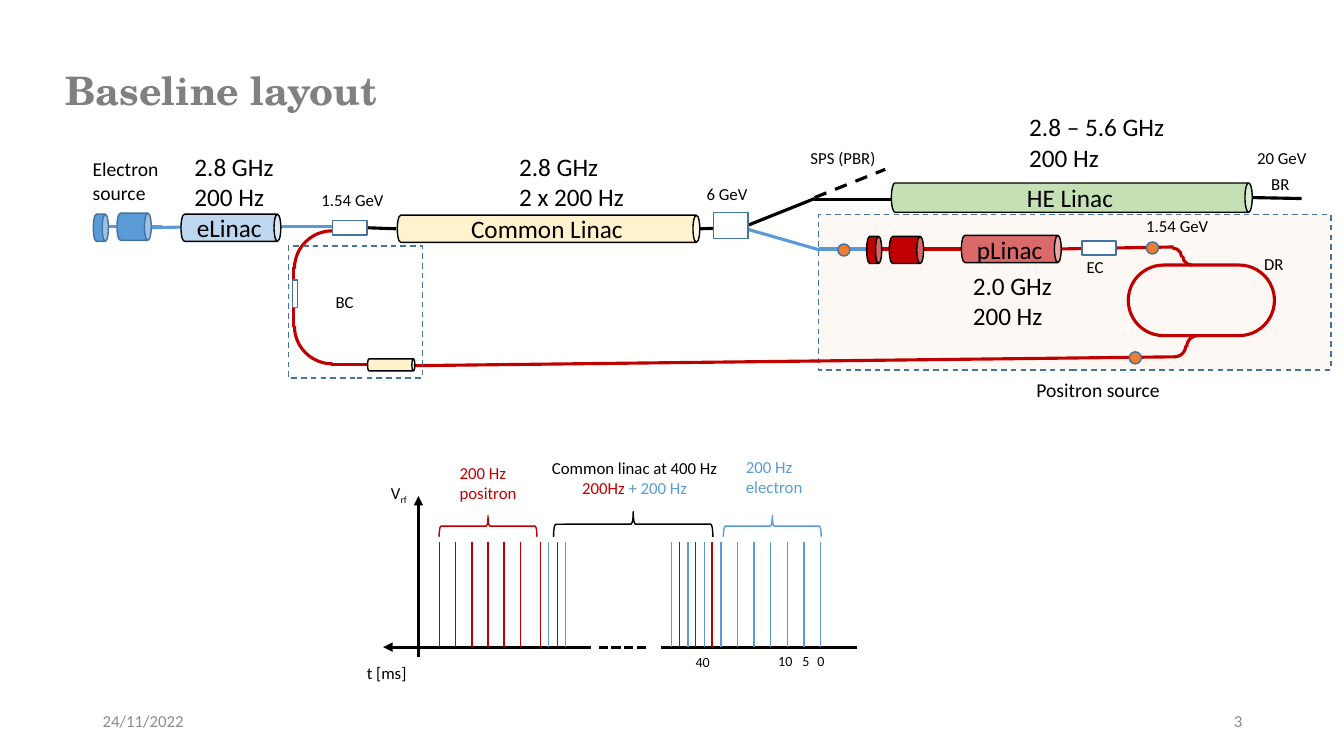
import dataclasses
from typing import Optional

import pptx
import pptx.dml.color
import pptx.enum.dml
import pptx.enum.shapes
import pptx.enum.text
import pptx.oxml
import pptx.oxml.ns
import pptx.util

SHAPE = pptx.enum.shapes.MSO_SHAPE
DASH = pptx.enum.dml.MSO_LINE.DASH
SHORT_DASH = pptx.enum.dml.MSO_LINE.SQUARE_DOT
ALIGN = pptx.enum.text.PP_ALIGN
ANCHOR = pptx.enum.text.MSO_ANCHOR
COLORS = {
    "black": "000000", "white": "FFFFFF", "gray": "808080", "footer": "8C8C8C",
    "positron": "C00000", "electron": "5B9BD5", "outline": "43739E",
    "area": "FBE5D6", "elinac": "BDD7EE", "common": "FFF2CC",
    "helinac": "C5E0B4", "marker": "ED7D31",
}


@dataclasses.dataclass
class Beam:
    x1: float
    y1: float
    x2: float
    y2: float
    color: str = "black"
    width: float = 2.25
    dash: Optional[object] = None
    arrow: bool = False


@dataclasses.dataclass
class Part:
    kind: object
    left: float
    top: float
    width: float
    height: float
    fill: Optional[str] = None
    line: str = "outline"
    weight: float = 1
    opacity: int = 100
    dash: Optional[object] = None
    flip: str = ""
    adjust: Optional[float] = None
    turn: int = 0
    text: str = ""


@dataclasses.dataclass
class Label:
    left: float
    top: float
    width: float
    height: float
    text: str
    size: float = 12
    color: str = "black"
    align: object = ALIGN.LEFT
    wrap: bool = True
    font: str = "Calibri"
    bold: bool = False
    middle: bool = False


def length(inches: float) -> int:
    return pptx.util.Cm(inches * 2.54)


def rgb(name: str):
    return pptx.dml.color.RGBColor.from_string(COLORS[name])


def add_xml(parent, tag: str, **attributes: str) -> None:
    child = pptx.oxml.parse_xml(f"<{tag} {pptx.oxml.ns.nsdecls('a')}/>")
    for name, value in attributes.items():
        child.set(name, value)
    parent.append(child)


def write_text(para, text: str, *, size: float = 12, color: str = "black",
               font: str = "Calibri", bold: bool = False,
               subscript: bool = False) -> None:
    span = para.add_run()
    span.text = text
    span.font.size = pptx.util.Pt(size)
    span.font.name = font
    span.font.bold = bold
    span.font.color.rgb = rgb(color)
    if subscript:
        span.font._element.set("baseline", "-25000")


def style_line(line, color: str, width: float, dash) -> None:
    line.color.rgb = rgb(color)
    line.width = pptx.util.Pt(width)
    if dash is not None:
        line.dash_style = dash


def add_beam(page, beam: Beam) -> None:
    connector = page.shapes.add_connector(
        pptx.enum.shapes.MSO_CONNECTOR.STRAIGHT,
        *map(length, (beam.x1, beam.y1, beam.x2, beam.y2)))
    style_line(connector.line, beam.color, beam.width, beam.dash)
    properties = connector.element.spPr
    if beam.arrow:
        add_xml(properties.ln, "a:tailEnd", type="triangle")
    add_xml(properties, "a:effectLst")


def add_part(page, part: Part) -> None:
    shape = page.shapes.add_shape(
        part.kind, *map(length, (part.left, part.top, part.width, part.height)))
    shape.shadow.inherit = False
    shape.rotation = part.turn
    if part.adjust is not None:
        shape.adjustments[0] = part.adjust
    if part.fill:
        shape.fill.solid()
        shape.fill.fore_color.rgb = rgb(part.fill)
        if part.opacity < 100:
            tone = shape.element.spPr.find(".//" + pptx.oxml.ns.qn("a:srgbClr"))
            add_xml(tone, "a:alpha", val=str(part.opacity * 1000))
    else:
        shape.fill.background()
    style_line(shape.line, part.line, part.weight, part.dash)
    for axis in part.flip:
        shape.element.spPr.xfrm.set("flip" + axis, "1")
    if part.text:
        frame = shape.text_frame
        frame.vertical_anchor = ANCHOR.MIDDLE
        frame._txBody.bodyPr.set("vert", "vert270")
        frame.paragraphs[0].alignment = ALIGN.CENTER
        write_text(frame.paragraphs[0], part.text, size=18)


def turned(kind, x: float, y: float, long: float, thick: float, **style) -> Part:
    """Shape centred on (x, y), turned a quarter so that it lies along the beam."""
    return Part(kind, x - thick / 2, y - long / 2, thick, long, turn=90, **style)


def can(x: float, y: float, long: float, fill: str, thick: float = 0.27,
        line: str = "black", **style) -> Part:
    return turned(SHAPE.CAN, x, y, long, thick, fill=fill, line=line, **style)


def bend(left: float, top: float, size: float, flip: str = "") -> Part:
    return Part(SHAPE.ARC, left, top, size, size, line="positron", weight=2.25, flip=flip)


def add_label(page, label: Label):
    box = page.shapes.add_textbox(
        *map(length, (label.left, label.top, label.width, label.height)))
    frame = box.text_frame
    frame.word_wrap = label.wrap
    if label.middle:
        frame.vertical_anchor = ANCHOR.MIDDLE
    else:
        frame.auto_size = pptx.enum.text.MSO_AUTO_SIZE.SHAPE_TO_FIT_TEXT
    for number, text in enumerate(label.text.split("\n")):
        para = frame.add_paragraph() if number else frame.paragraphs[0]
        para.alignment = label.align
        write_text(para, text, size=label.size, color=label.color,
                   font=label.font, bold=label.bold)
    return frame


# Beam lines
BEAMS = [
    Beam(10.52, 2.47, 11.64, 2.45, "positron"), Beam(8.12, 2.47, 8.65, 2.47, "electron"),
    Beam(11.66, 3.54, 3.91, 3.63, "positron"), Beam(1.47, 2.26, 2.4, 2.24, "electron"),
    Beam(2.91, 2.65, 2.91, 3.24, "positron"), Beam(2.76, 2.25, 3.3, 2.25, "electron"),
    Beam(3.3, 2.31, 3.61, 2.31, "positron"), Beam(3.65, 2.26, 3.93, 2.27),
    Beam(7.33, 2.25, 8.13, 2.48, "electron"), Beam(7.38, 2.25, 8.08, 1.97),
    Beam(8.07, 1.98, 8.85, 1.98), Beam(9.16, 2.47, 9.53, 2.47, "positron"),
    Beam(8.73, 2.47, 8.82, 2.47, "positron"), Beam(6.94, 2.27, 7.25, 2.26),
    Beam(3.93, 3.62, 3.28, 3.62, "positron"), Beam(1.49, 2.25, 1.61, 2.25, "electron"),
    Beam(1.06, 2.25, 1.18, 2.25, "electron"), Beam(12.41, 1.96, 12.91, 1.97),
    Beam(8.08, 1.96, 8.78, 1.68, dash=DASH),
]
# Accelerator parts
AREA = Part(SHAPE.RECTANGLE, 8.12, 2.13, 5.08, 1.54, "area", opacity=26, dash=DASH)
PARTS = [
    bend(11.54, 2.46, 0.18), bend(11.73, 2.45, 0.18, "HV"),
    bend(11.77, 3.33, 0.22, "H"), bend(11.54, 3.32, 0.22, "V"),
    bend(2.92, 2.86, 0.75, "HV"), bend(2.92, 2.29, 0.75, "H"),
    Part(SHAPE.ROUNDED_RECTANGLE, 11.19, 2.63, 1.45, 0.7, line="positron",
         weight=2.25, adjust=0.5),
    can(10.03, 2.47, 0.99, "positron", opacity=57, text="pLinac"),
    can(5.44, 2.27, 3, "common", text="Common Linac"),
    can(2.29, 2.26, 0.99, "elinac", text="eLinac"),
    can(10.63, 1.96, 3.58, "helinac", thick=0.29, text="HE Linac"),
    can(8.99, 2.48, 0.34, "positron"), can(8.67, 2.48, 0.15, "positron", adjust=0.405),
    can(1.33, 2.25, 0.34, "electron", line="outline"),
    can(1, 2.26, 0.15, "electron", line="outline", adjust=0.405),
    can(3.88, 3.62, 0.47, "common", thick=0.12),
    *(Part(SHAPE.RECTANGLE, *place, "white") for place in (
        (3.3, 2.19, 0.34, 0.14), (2.9, 2.78, 0.05, 0.27),
        (7.08, 2.11, 0.34, 0.26), (10.73, 2.39, 0.34, 0.14))),
    *(Part(SHAPE.OVAL, x, y, 0.12, 0.12, "marker")
      for x, y in ((11.37, 2.4), (8.31, 2.42), (11.2, 3.49))),
    Part(SHAPE.RECTANGLE, 2.86, 2.44, 1.33, 1.31, dash=DASH),
]
# Pulse timing diagram
AXES = [
    Beam(5.86, 6.42, 3.8, 6.42, arrow=True), Beam(4.15, 6.52, 4.15, 4.92, arrow=True),
    Beam(5.94, 6.42, 6.42, 6.42, dash=SHORT_DASH), Beam(6.56, 6.42, 8.5, 6.42),
]
PULSE_TRAINS = [  # first position, spacing, count, colour
    (4.36, 0.16, 6, "positron"), (5.36, 0.17, 2, "positron"), (5.44, 0.17, 2, "electron"),
    (6.74, 0.16, 3, "positron"), (6.66, 0.165, 3, "electron"), (7.15, 0.165, 7, "electron"),
]
PULSES = [Beam(start + step * n, 5.38, start + step * n, 6.42, color, 1)
          for start, step, count, color in PULSE_TRAINS for n in range(count)]
BRACES = [turned(SHAPE.LEFT_BRACE, x, y, long, thick, line=color) for x, y, long, thick, color in (
    (7.66, 5.22, 0.97, 0.21, "electron"), (4.84, 5.22, 0.97, 0.21, "positron"),
    (6.28, 5.2, 1.58, 0.25, "black"))]
# Texts
LABELS = [
    Label(0.55, 0.61, 6.87, 0.57, "Baseline layout", 28, "gray", font="TeX Gyre Schola", bold=True),
    Label(12.44, 2.47, 0.54, 0.3, "DR"), Label(7.94, 1.42, 1.19, 0.3, "SPS (PBR)"),
    Label(10.68, 2.5, 0.48, 0.3, "EC"), Label(3.23, 2.85, 0.48, 0.3, "BC"),
    Label(3.09, 1.83, 1.21, 0.3, "1.54 GeV"), Label(6.91, 1.77, 1.21, 0.3, "6 GeV"),
    Label(11.27, 2.09, 1.21, 0.3, "1.54 GeV"), Label(12.51, 1.67, 0.75, 0.3, "BR"),
    Label(12.37, 1.42, 0.89, 0.3, "20 GeV"),
    Label(10.18, 3.7, 1.79, 0.34, "Positron source", 14),
    Label(0.82, 1.51, 1.12, 0.57, "Electron source", 14),
    Label(1.83, 1.45, 1, 0.71, "2.8 GHz\n200 Hz", 18, wrap=False),
    Label(5.05, 1.45, 1.25, 0.71, "2.8 GHz\n2 x 200 Hz", 18, wrap=False),
    Label(10.11, 1.06, 1.56, 0.71, "2.8 – 5.6 GHz\n200 Hz", 18, wrap=False),
    Label(9.55, 2.63, 1, 0.71, "2.0 GHz\n200 Hz", 18, wrap=False),
    Label(3.54, 6.53, 0.9, 0.46, "t [ms]"),
    Label(8.01, 6.42, 0.33, 0.41, "0", 10), Label(7.86, 6.42, 0.33, 0.41, "5", 10),
    Label(7.62, 6.42, 0.57, 0.41, "10", 10), Label(6.8, 6.43, 0.59, 0.41, "40", 10),
    Label(7.3, 4.48, 1.03, 0.5, "200 Hz electron", color="electron"),
    Label(4.46, 4.54, 1.03, 0.5, "200 Hz\npositron", color="positron"),
    Label(0.92, 6.95, 3, 0.4, "24/11/2022", color="footer", middle=True),
    Label(9.42, 6.95, 3, 0.4, "3", color="footer", align=ALIGN.RIGHT, middle=True),
]


def main() -> None:
    deck = pptx.Presentation()
    deck.slide_width, deck.slide_height = length(13.33), length(7.5)
    page = deck.slides.add_slide(deck.slide_layouts[6])
    add_part(page, AREA)
    for beam in BEAMS + AXES + PULSES:
        add_beam(page, beam)
    for part in PARTS + BRACES:
        add_part(page, part)
    for label in LABELS:
        add_label(page, label)
    # Labels with mixed formats
    voltage = add_label(page, Label(3.78, 4.74, 0.57, 0.46, "V"))
    write_text(voltage.paragraphs[0], "rf", subscript=True)
    common = add_label(page, Label(5.21, 4.49, 2.17, 0.5, "Common linac at 400 Hz",
                                   align=ALIGN.CENTER))
    para = common.add_paragraph()
    para.alignment = ALIGN.CENTER
    write_text(para, "200Hz ", color="positron")
    write_text(para, "+ 200 Hz", color="electron")
    deck.save("out.pptx")


if __name__ == "__main__":
    main()
